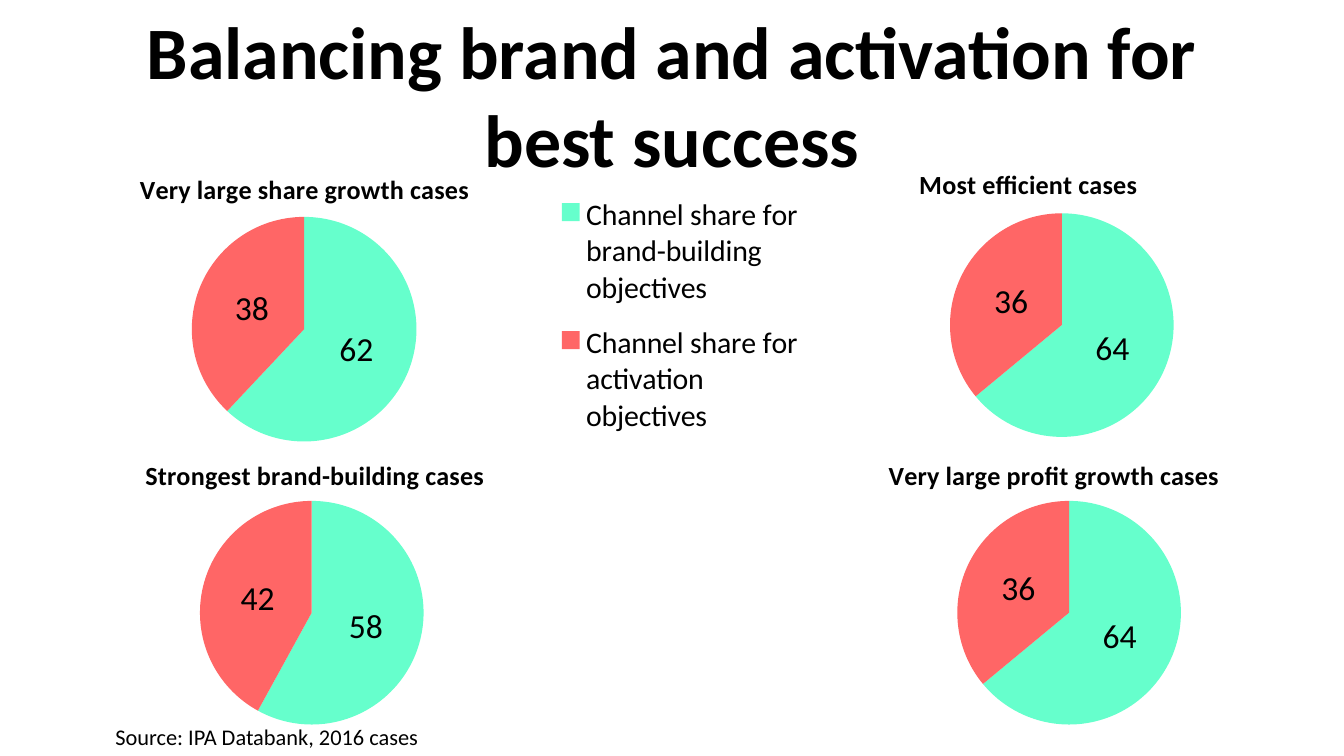
from lxml import etree
from pptx import Presentation, util as u
from pptx.chart.data import CategoryChartData
from pptx.dml.color import RGBColor
from pptx.enum import chart as c, text as t
from pptx.oxml import ns

WIDTH = 10
HEIGHT = WIDTH * 9 / 16
FONT = "Calibri"
BLACK, MINT, CORAL = "000000", "66FFCC", "FF6666"
CATEGORIES = ["Channel share for brand-building objectives",
              "Channel share for activation objectives"]
PLOT = (0.26, 0.17, 0.62, 0.73)
LEGEND_PLOT = (0.03, 0.17, 0.51, 0.76)
LEGEND = (0.61, 0.04, 0.35, 0.93)
PIES = [
    ("Very large share growth cases", (62, 38), (0.67, 1.24, 5.59, 2.2), (0.06, 0), True),
    ("Most efficient cases", (64, 36), (6.06, 1.2, 3.23, 2.28), (0.23, 0), False),
    ("Strongest brand-building cases", (58, 42), (0.12, 3.34, 3.86, 2.28), (0.24, 0.01), False),
    ("Very large profit growth cases", (64, 36), (5.71, 3.34, 3.94, 2.28), (0.22, 0.01), False),
]


def color(value):
    """Turn a hex string into a colour."""
    return RGBColor.from_string(value)


def set_font(font, size, bold=False):
    """Apply the slide's typeface at one size and weight."""
    font.name, font.size, font.bold = FONT, u.Pt(size), bold
    font.color.rgb = color(BLACK)


def add_text(slide, box, content, size, bold=False, centered=False):
    """Place one paragraph of text in a box."""
    frame = slide.shapes.add_textbox(*map(u.Inches, box)).text_frame
    frame.word_wrap = centered
    if centered:
        frame.vertical_anchor = t.MSO_ANCHOR.MIDDLE
    paragraph = frame.paragraphs[0]
    paragraph.text = content
    paragraph.alignment = t.PP_ALIGN.CENTER if centered else t.PP_ALIGN.LEFT
    set_font(paragraph.font, size, bold)


def set_layout(element, before, shares, inner=False):
    """Position a chart part by shares of the chart's size."""
    for old in element.findall(ns.qn("c:layout")):
        element.remove(old)
    layout = etree.Element(ns.qn("c:layout"))
    manual = etree.SubElement(layout, ns.qn("c:manualLayout"))
    settings = [("layoutTarget", "inner")] if inner else []
    settings += [("xMode", "edge"), ("yMode", "edge")]
    settings += zip("xywh", map(str, shares))
    for name, value in settings:
        etree.SubElement(manual, ns.qn(f"c:{name}")).set("val", value)
    element.find(ns.qn(before)).addprevious(layout)


def add_pie(slide, box, title, values, title_corner, has_legend):
    """Draw a titled pie of channel shares in a box."""
    data = CategoryChartData(number_format="0")
    data.categories = CATEGORIES if has_legend else ["1", "2"]
    data.add_series("Series 1", values)
    chart = slide.shapes.add_chart(
        c.XL_CHART_TYPE.PIE, *map(u.Inches, box), data).chart
    set_font(chart.font, 18)

    chart.has_title = True
    chart.chart_title.text_frame.text = title
    set_font(chart.chart_title.text_frame.paragraphs[0].font, 14, True)
    chart.chart_title.include_in_layout = False
    set_layout(chart.chart_title._element, "c:overlay", title_corner)

    plot = chart.plots[0]
    plot.vary_by_categories = True
    plot.has_data_labels = True
    labels = plot.data_labels
    labels.show_value = True
    labels.number_format, labels.number_format_is_linked = "0", False
    labels.position = c.XL_LABEL_POSITION.CENTER
    set_font(labels.font, 18)
    for index, fill_color in enumerate((MINT, CORAL)):
        fill = plot.series[0].points[index].format.fill
        fill.solid()
        fill.fore_color.rgb = color(fill_color)
    set_layout(chart._chartSpace.chart.plotArea, "c:pieChart",
               LEGEND_PLOT if has_legend else PLOT, inner=True)

    chart.has_legend = has_legend
    if has_legend:
        chart.legend.position = c.XL_LEGEND_POSITION.RIGHT
        chart.legend.include_in_layout = False
        set_font(chart.legend.font, 16)
        set_layout(chart.legend._element, "c:overlay", LEGEND)


def main():
    """Build and save the slide."""
    presentation = Presentation()
    presentation.slide_width = u.Inches(WIDTH)
    presentation.slide_height = u.Inches(HEIGHT)
    slide = presentation.slides.add_slide(presentation.slide_layouts[6])
    add_text(slide, (0.5, 0.23, 9, 0.94),
             "Balancing brand and activation for best success", 39.6, True, True)
    for title, values, box, title_corner, has_legend in PIES:
        add_pie(slide, box, title, values, title_corner, has_legend)
    add_text(slide, (0.76, 5.33, 2.59, 0.3), "Source: IPA Databank, 2016 cases", 12)
    presentation.save("out.pptx")


if __name__ == "__main__":
    main()
